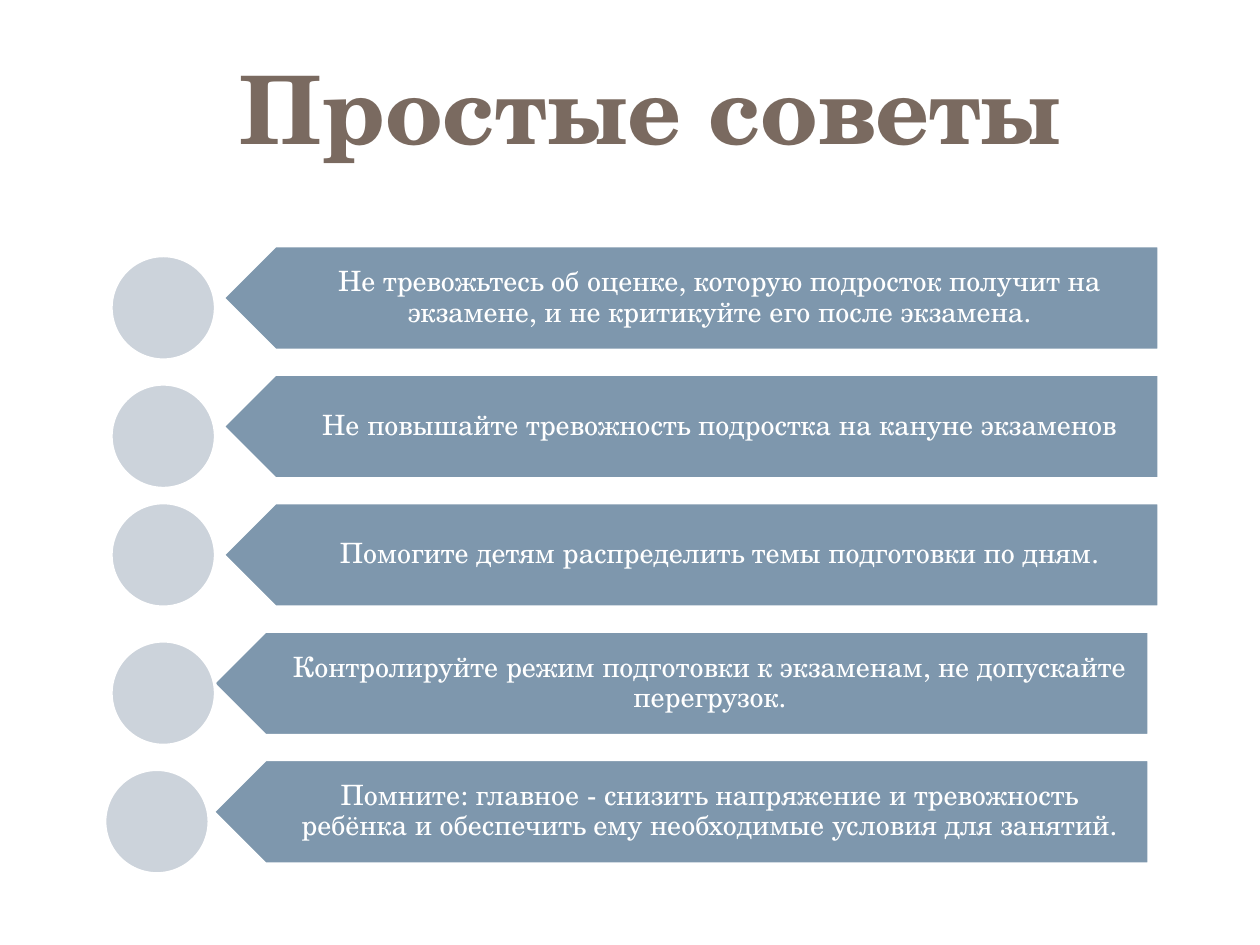
from pptx import Presentation
from pptx.dml.color import RGBColor
from pptx.enum.shapes import MSO_SHAPE as Preset
from pptx.enum.text import MSO_ANCHOR as Anchor, PP_ALIGN as Align
from pptx.util import Pt

COLORS = {"title": "7A6A60", "arrow": "7E97AD", "circle": "CCD3DB", "white": "FFFFFF"}
FONT = "TeX Gyre Schola"
ROW_TOP, ROW_PITCH, ROW_HEIGHT = 140.4, 73.4, 59.8
ARROW_WIDTH, TEXT_INDENT = 535, 15
TIPS = [
    ("Не тревожьтесь об оценке, которую подросток получит на экзамене, "
     "и не критикуйте его после экзамена.", 127.4, 63.4, 5.6),
    ("Не повышайте тревожность подростка на кануне экзаменов", 127.4, 63.4, 5.6),
    ("Помогите детям распределить темы подготовки по дням.", 127.4, 63.4, 0),
    ("Контролируйте режим подготовки к экзаменам, не допускайте перегрузок.",
     121.7, 63.4, 5.6),
    ("Помните: главное - снизить напряжение и тревожность ребёнка "
     "и обеспечить ему необходимые условия для занятий.", 121.7, 59.8, 5.6),
]


def color(name):
    """Return the named colour."""
    return RGBColor.from_string(COLORS[name])


def add_text(shapes, box, text, size, color_name, bold=False):
    """Add a centred text box and return its text frame."""
    frame = shapes.add_textbox(*map(Pt, box)).text_frame
    frame.word_wrap = True
    frame.text = text
    paragraph = frame.paragraphs[0]
    paragraph.alignment = Align.CENTER
    font = paragraph.runs[0].font
    font.name, font.size, font.bold = FONT, Pt(size), bold
    font.color.rgb = color(color_name)
    return frame


def add_outlined(shapes, preset, box, fill):
    """Add a filled shape with a white outline."""
    shape = shapes.add_shape(preset, *map(Pt, box))
    shape.shadow.inherit = False
    shape.fill.solid()
    shape.fill.fore_color.rgb = color(fill)
    shape.line.color.rgb = color("white")
    shape.line.width = Pt(2)
    return shape


def add_tip(shapes, left, top, width, height, text, circle_left, circle_drop):
    """Add one arrow with its text and the circle beside it."""
    arrow = add_outlined(shapes, Preset.PENTAGON, (left, top, width, height), "arrow")
    arrow.rotation = 180
    text_box = (left + TEXT_INDENT, top, width - TEXT_INDENT, height)
    frame = add_text(shapes, text_box, text, 16, "white")
    frame.vertical_anchor = Anchor.MIDDLE
    frame.margin_left, frame.margin_right = Pt(26.6), Pt(8.6)
    frame.margin_top = frame.margin_bottom = Pt(5)
    frame.paragraphs[0].line_spacing = 0.9
    circle_box = (circle_left, top + circle_drop, height, height)
    add_outlined(shapes, Preset.OVAL, circle_box, "circle")


def main():
    """Build and save the slide."""
    presentation = Presentation()
    presentation.slide_width, presentation.slide_height = Pt(720), Pt(540)
    slide = presentation.slides.add_slide(presentation.slide_layouts[6])
    add_text(slide.shapes, (93.6, 25.2, 556.6, 72.7), "Простые советы", 54, "title", True)
    tips = slide.shapes.add_group_shape().shapes
    for row, (text, left, circle_left, circle_drop) in enumerate(TIPS):
        add_tip(tips, left, ROW_TOP + row * ROW_PITCH, ARROW_WIDTH, ROW_HEIGHT,
                text, circle_left, circle_drop)
    presentation.save("out.pptx")


if __name__ == "__main__":
    main()
